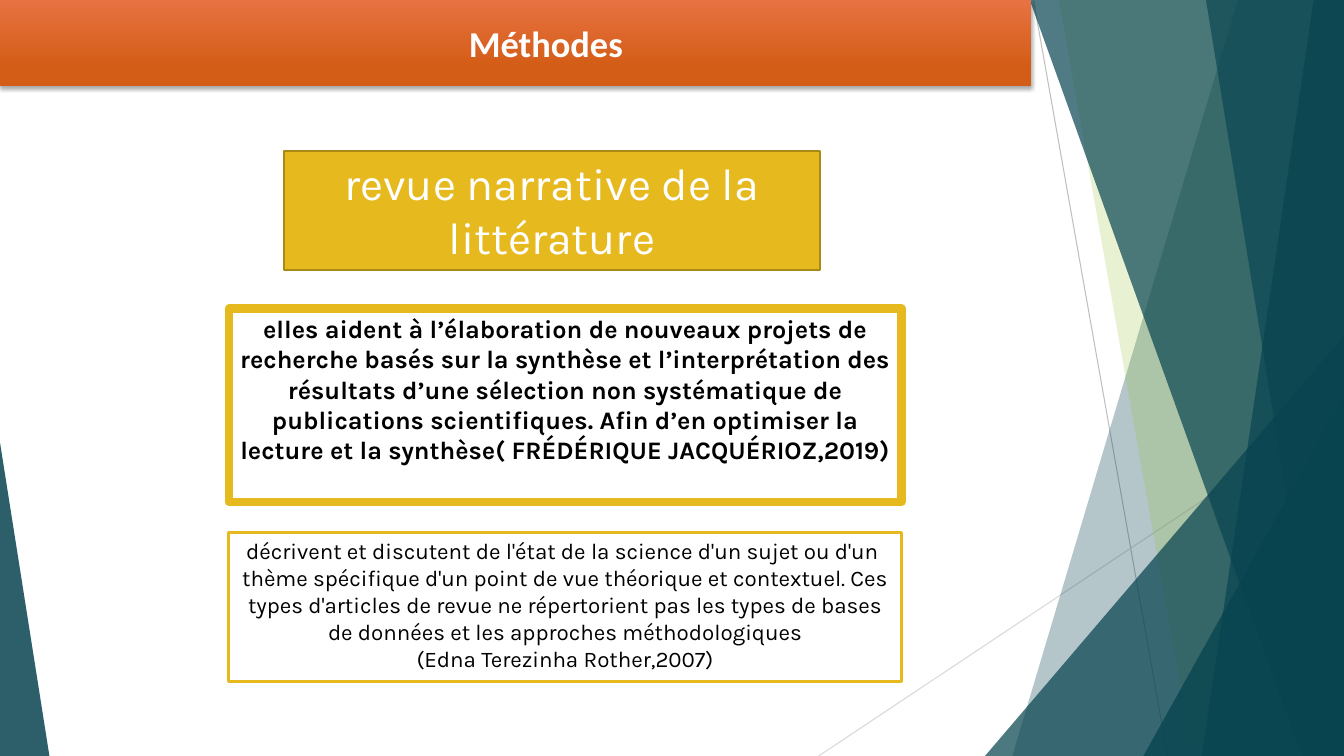
from pptx import Presentation
from pptx.dml.color import RGBColor
from pptx.enum.shapes import MSO_CONNECTOR, MSO_SHAPE
from pptx.enum.text import MSO_ANCHOR, PP_ALIGN
from pptx.oxml import parse_xml
from pptx.oxml.ns import nsdecls, qn
from pptx.util import Emu, Pt
from lxml.etree import SubElement

PX = 9144
W, H = 1333, 750
COLORS = {
    "white": "FFFFFF", "black": "000000", "teal": "084450", "green": "90C226",
    "gold": "E6B91E", "gold_dark": "AA8916", "orange": "E87242",
    "orange_dark": "D35D16", "gray": "BFBFBF", "gray_light": "D9D9D9",
}


def px(*values):
    return [Emu(v * PX) for v in values]


def rgb(name):
    return RGBColor.from_string(COLORS[name])


class Deck:
    font = "Karla"
    banner_font = "Calibri"

    def __init__(self):
        self.prs = Presentation()
        self.prs.slide_width, self.prs.slide_height = px(W, H)
        self.s = self.prs.slides.add_slide(self.prs.slide_layouts[6])

    def fill(self, sp, color, alpha=100):
        sp.shadow.inherit = False
        sp.fill.solid()
        sp.fill.fore_color.rgb = rgb(color)
        sp.line.fill.background()
        if alpha < 100:
            clr = sp._element.spPr.find(qn("a:solidFill"))[0]
            SubElement(clr, qn("a:alpha")).set("val", str(alpha * 1000))

    def line(self, x1, y1, x2, y2, color):
        c = self.s.shapes.add_connector(MSO_CONNECTOR.STRAIGHT, *px(x1, y1, x2, y2))
        c.line.color.rgb = rgb(color)
        c.line.width = Pt(0.75)
        SubElement(c._element.spPr, qn("a:effectLst"))

    def band(self, top_left, top_right, bottom_left, color, alpha):
        corners = [(top_right, -1), (W, H), (bottom_left, H)]
        if top_right < W:
            corners.insert(1, (W, -1))
        fb = self.s.shapes.build_freeform(top_left, -1, scale=PX)
        fb.add_line_segments(corners, close=True)
        self.fill(fb.convert_to_shape(), color, alpha)

    def triangle(self, x, y, w, h, apex, alpha):
        sp = self.s.shapes.add_shape(MSO_SHAPE.ISOSCELES_TRIANGLE, *px(x, y, w, h))
        sp.adjustments[0] = apex
        self.fill(sp, "teal", alpha)

    def text(self, tf, lines, size, color, font, bold=False):
        tf.word_wrap = True
        for i, line in enumerate(lines):
            p = tf.paragraphs[0] if i == 0 else tf.add_paragraph()
            p.text = line
            p.alignment = PP_ALIGN.CENTER
            p.font.name = font
            p.font.size = Pt(size)
            p.font.bold = bold
            p.font.color.rgb = rgb(color)

    def banner(self, x, y, w, h, title):
        sp = self.s.shapes.add_shape(MSO_SHAPE.RECTANGLE, *px(x, y, w, h))
        sp.line.fill.background()
        sp.fill.gradient()
        sp.fill.gradient_angle = 270
        stops = [(0, "orange"), (0.78, "orange_dark")]
        for stop, (position, color) in zip(sp.fill.gradient_stops, stops):
            stop.position = position
            stop.color.rgb = rgb(color)
        sp._element.spPr.append(parse_xml(
            f'<a:effectLst {nsdecls("a")}><a:outerShdw blurRad="{Pt(3)}" '
            f'dist="{Pt(2)}" dir="5400000" rotWithShape="0"><a:srgbClr '
            f'val="{COLORS["black"]}"><a:alpha val="35000"/></a:srgbClr>'
            '</a:outerShdw></a:effectLst>'))
        tf = self.s.shapes.add_textbox(*px(x, y, w, h)).text_frame
        tf.vertical_anchor = MSO_ANCHOR.MIDDLE
        tf.margin_left, tf.margin_top, tf.margin_right, tf.margin_bottom = px(67, 7, 7, 7)
        self.text(tf, [title], 26, "white", self.banner_font, True)

    def box(self, x, y, w, h, lines, size, color="black", fill="white",
            border="gold", width=1.5, bold=False):
        sp = self.s.shapes.add_shape(MSO_SHAPE.RECTANGLE, *px(x, y, w, h))
        self.fill(sp, fill)
        sp.line.color.rgb = rgb(border)
        sp.line.width = Pt(width)
        sp.text_frame.vertical_anchor = MSO_ANCHOR.TOP
        self.text(sp.text_frame, lines, size, color, self.font, bold)


def main():
    d = Deck()
    d.line(1025, 0, 1158, H, "gray")
    d.line(W, 403, 812, H, "gray_light")
    d.band(1228, W, 1004, "teal", 30)
    d.band(1050, W, 1183, "green", 20)
    d.triangle(977, 333, 356, 417, 1, 72)
    d.band(1021, W, 1291, "teal", 70)
    d.band(1303, W, 1192, "teal", 70)
    d.band(1196, W, 1318, "teal", 65)
    d.triangle(1134, 393, 199, 357, 1, 80)
    d.triangle(0, 439, 49, 311, 0, 85)

    d.banner(0, 0, 1023, 85, "Méthodes")
    d.box(227, 306, 667, 192, [
        "elles aident à l’élaboration de nouveaux projets de recherche basés sur "
        "la synthèse et l’interprétation des résultats d’une sélection non "
        "systématique de publications scientifiques. Afin d’en optimiser la "
        "lecture et la synthèse( FRÉDÉRIQUE JACQUÉRIOZ,2019)",
    ], 18, width=6, bold=True)
    d.box(282, 150, 531, 118, ["revue narrative de la littérature"], 32,
          color="white", fill="gold", border="gold_dark")
    d.box(227, 528, 667, 148, [
        "décrivent et discutent de l'état de la science d'un sujet ou d'un ",
        "thème spécifique d'un point de vue théorique et contextuel. Ces types "
        "d'articles de revue ne répertorient pas les types de bases de données "
        "et les approches méthodologiques",
        "(Edna Terezinha Rother,2007)",
    ], 16, width=2.25)
    d.prs.save("out.pptx")


if __name__ == "__main__":
    main()
